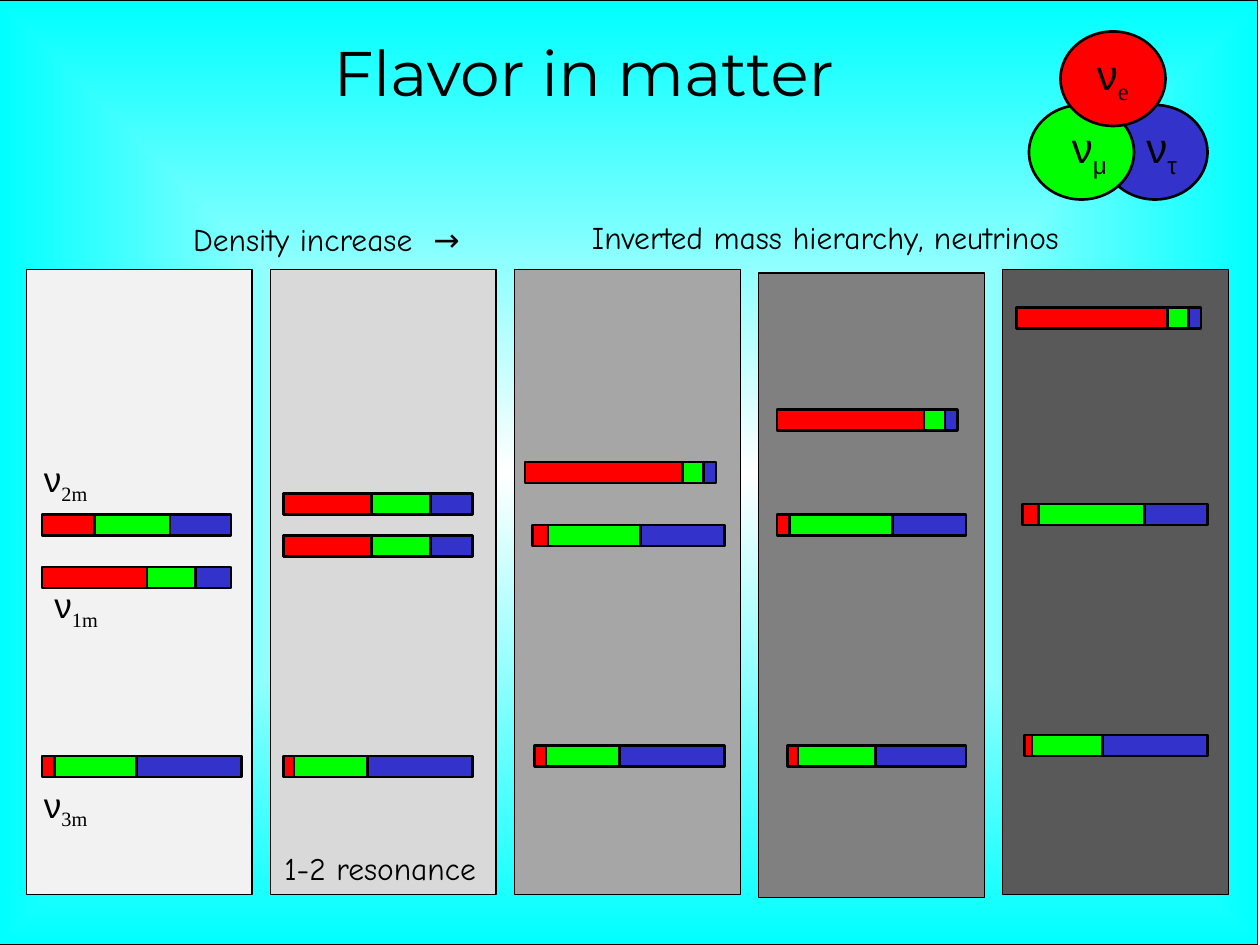
"""Build a slide of neutrino flavor content in matter of increasing density."""
from lxml import etree
from pptx import Presentation
from pptx import util as u
from pptx.dml.color import RGBColor
from pptx.enum import shapes, text
from pptx.oxml import ns

BLACK = RGBColor(0, 0, 0)
WHITE = RGBColor(255, 255, 255)
CYAN = RGBColor(0, 255, 255)
RED = RGBColor(255, 0, 0)
GREEN = RGBColor(0, 255, 0)
BLUE = RGBColor(0x33, 0x33, 0xCC)
GREYS = [RGBColor(level, level, level) for level in (0xF2, 0xD9, 0xA6, 0x80, 0x59)]
COLUMNS, ROWS = 120, 90

deck = Presentation()
deck.slide_width, deck.slide_height = u.Inches(10), u.Inches(7.5)
cell = deck.slide_width // COLUMNS
page = deck.slides.add_slide(deck.slide_layouts[5])


def draw(kind, left, top, width, height, color, weight=1.5):
    box = page.shapes.add_shape(kind, *(round(n * cell) for n in (left, top, width, height)))
    box.shadow.inherit = False
    box.fill.solid()
    box.fill.fore_color.rgb = color
    box.line.color.rgb = BLACK
    box.line.width = u.Pt(weight)
    return box


def write(box, words, size=18, font="Comic Neue", subscript="", subscript_font="Times New Roman",
          align=text.PP_ALIGN.LEFT, wrap=False):
    frame = box.text_frame
    frame.word_wrap = wrap
    frame.auto_size = text.MSO_AUTO_SIZE.NONE
    frame.vertical_anchor = text.MSO_ANCHOR.TOP
    para = frame.paragraphs[0]
    para.alignment = align
    for part, face in ((words, font), (subscript, subscript_font)):
        if part:
            span = para.add_run()
            span.text = part
            span.font.size = u.Pt(size)
            span.font.name = face
            span.font.color.rgb = BLACK
    if subscript:
        span.font._element.set("baseline", "-25000")


RECTANGLE, OVAL = shapes.MSO_SHAPE.RECTANGLE, shapes.MSO_SHAPE.OVAL

backdrop = draw(RECTANGLE, -0.2, 0, COLUMNS, ROWS, CYAN, weight=0.75)
backdrop.fill.gradient()
for stop, color in zip(backdrop.fill.gradient_stops, (WHITE, CYAN)):
    stop.color.rgb = color
gradient = backdrop._element.spPr.find(ns.qn("a:gradFill"))
gradient.remove(gradient.find(ns.qn("a:lin")))
shape_path = etree.SubElement(gradient, ns.qn("a:path"), {"path": "shape"})
etree.SubElement(shape_path, ns.qn("a:fillToRect"), {side: "50000" for side in "ltrb"})

title = page.shapes.title
page.shapes._spTree.append(title._element)
title.left, title.top = round(21.6 * cell), round(2.6 * cell)
title.width, title.height = 68 * cell, round(15.4 * cell)
write(title, "Flavor in matter", size=36, font="Montserrat", align=text.PP_ALIGN.CENTER)

for index, grey in enumerate(GREYS):
    top = 26 if index == 3 else 25.7
    draw(RECTANGLE, 2.5 + 23.25 * index, top, 21.5, 59.5, grey, weight=0.75)

for left, top, color in ((105, 10, BLUE), (98, 10, GREEN), (101, 3, RED)):
    draw(OVAL, left, top, 10, 9, color)

levels = [
    (49, (4, 9, 16.2, 22)), (54, (4, 14, 18.6, 22)), (72, (4, 5.2, 13, 23)),
    (47, (27, 35.4, 41, 45)), (51, (27, 35.4, 41, 45)), (72, (27, 28, 35, 45)),
    (44, (50, 65, 67, 68.2)), (50, (50.7, 52.2, 61, 69)), (71, (50.9, 52, 59, 69)),
    (39, (74, 88, 90, 91.2)), (49, (74, 75.2, 85, 92)), (71, (75, 76, 83.4, 92)),
    (29.3, (96.8, 111.2, 113.2, 114.4)), (48, (97.4, 98.9, 109, 115)),
    (70, (97.6, 98.3, 105, 115)),
]
for top, edges in levels:
    for start, end, flavor in zip(edges, edges[1:], (RED, GREEN, BLUE)):
        draw(RECTANGLE, start, top, end - start, 2, flavor)

neutrinos = [
    (100.9, 11, 24, "μ", "Arial"), (108, 11, 24, "τ", "Arial"),
    (103.3, 4, 24, "e", "Times New Roman"), (3, 43, 20, "2m", "Times New Roman"),
    (4, 55, 20, "1m", "Times New Roman"), (3, 74, 20, "3m", "Times New Roman"),
]
for left, top, size, name, face in neutrinos:
    box = page.shapes.add_textbox(round(left * cell), top * cell, 6 * cell, size * cell // 4)
    write(box, "ν", size=size, font="Arial", subscript=name, subscript_font=face)

captions = [
    (17.2, 20.4, 31.8, "Density increase  →"),
    (55.2, 20.2, 52.8, "Inverted mass hierarchy, neutrinos"),
    (25.9, 80.3, 22.8, "1-2 resonance"),
]
for left, top, width, words in captions:
    box = page.shapes.add_textbox(*(round(n * cell) for n in (left, top, width, 4.8)))
    write(box, words, wrap=True)

deck.save("out.pptx")
